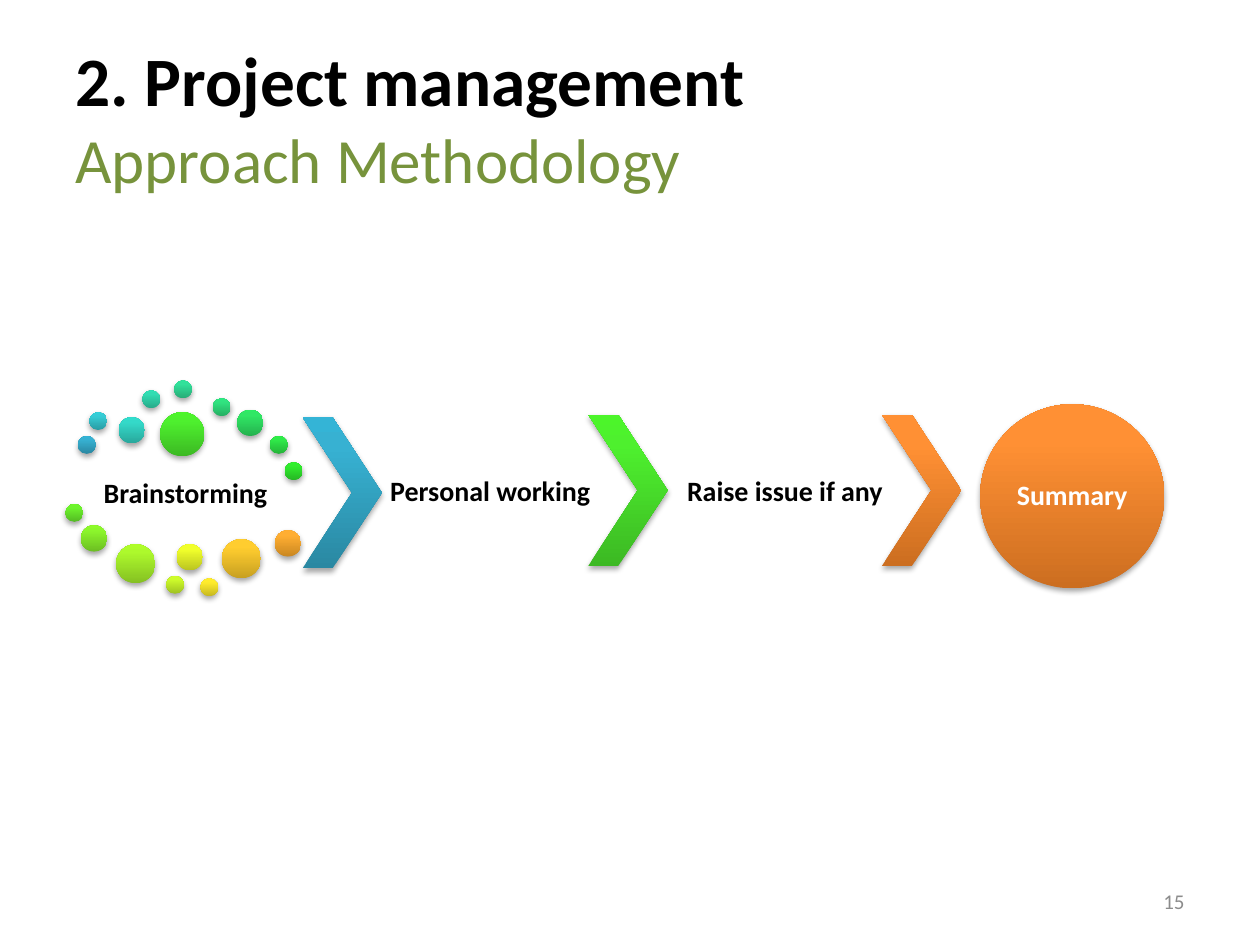
"""Build the project management slide with its brainstorming-to-summary process."""
from lxml import etree
from pptx import Presentation
from pptx.dml.color import RGBColor
from pptx.enum.shapes import MSO_SHAPE
from pptx.enum.text import MSO_ANCHOR, MSO_AUTO_SIZE, PP_ALIGN
from pptx.oxml import parse_xml
from pptx.util import Cm, Pt

DRAWING = "http://schemas.openxmlformats.org/drawingml/2006/main"
BLUE = ("2A88A2", "37B1D2", "34B4D6")
GREEN = ("3CB923", "4EF02E", "4CF52A")
ORANGE = ("CC6E20", "FF9034", "FF9136")
SMALL, MEDIUM, LARGE, CORE = 0.36, 0.53, 0.79, 0.89


def style_text(frame, size, color, bold=True, align=PP_ALIGN.CENTER, inset=0.05):
    frame.word_wrap = True
    frame.vertical_anchor = MSO_ANCHOR.MIDDLE
    frame.margin_left = frame.margin_right = Cm(inset)
    frame.margin_top = frame.margin_bottom = Cm(inset)
    paragraph = frame.paragraphs[0]
    paragraph.alignment = align
    for run in paragraph.runs:
        run.font.name = "Calibri"
        run.font.size = Pt(size)
        run.font.bold = bold
        run.font.color.rgb = RGBColor.from_string(color)


def add_glossy(kind, left, top, width, height, colors):
    shape = slide.shapes.add_shape(kind, Cm(left), Cm(top), Cm(width), Cm(height))
    shape.line.fill.background()
    shape.fill.gradient()
    shape.fill.gradient_angle = 90
    stops = shape._element.spPr.find(f".//{{{DRAWING}}}gsLst")
    for stop in list(stops):
        stops.remove(stop)
    for position, color in zip((0, 80000, 100000), colors):
        stop = etree.SubElement(stops, f"{{{DRAWING}}}gs", pos=str(position))
        etree.SubElement(stop, f"{{{DRAWING}}}srgbClr", val=color)
    shape._element.spPr.append(parse_xml(
        f'<a:effectLst xmlns:a="{DRAWING}">'
        '<a:outerShdw blurRad="40000" dist="23000" dir="5400000" rotWithShape="0">'
        '<a:srgbClr val="000000"><a:alpha val="35000"/></a:srgbClr>'
        '</a:outerShdw></a:effectLst>'))
    return shape


prs = Presentation()
prs.slide_width, prs.slide_height = Cm(25.4), Cm(19.05)
slide = prs.slides.add_slide(prs.slide_layouts[5])

title = slide.shapes.title
title.left, title.top, title.width, title.height = Cm(1.27), Cm(0.76), Cm(22.86), Cm(3.18)
title.text_frame.text = "2. Project management\vApproach Methodology"
title.text_frame.auto_size = MSO_AUTO_SIZE.NONE
style_text(title.text_frame, 39.6, "000000", align=PP_ALIGN.LEFT, inset=0.25)
subtitle = title.text_frame.paragraphs[0].runs[1]
subtitle.font.size = Pt(36)
subtitle.font.bold = False
subtitle.font.color.rgb = RGBColor.from_string("77933C")

page_number = slide.shapes.add_textbox(Cm(18.21), Cm(17.65), Cm(5.92), Cm(1.02))
page_number.text_frame.text = "15"
style_text(page_number.text_frame, 12, "8C8C8C", False, PP_ALIGN.RIGHT, 0.25)

idea_dots = [
    (1.57, 8.79, SMALL, BLUE),
    (1.80, 8.31, SMALL, ("299DA4", "36CCD5", "33D0D9")),
    (2.39, 8.41, MEDIUM, ("28A79B", "34D9C9", "31DDCD")),
    (2.87, 7.87, SMALL, ("27AA89", "33DCB2", "30E1B5")),
    (3.51, 7.67, SMALL, ("27AC77", "32E09A", "2FE49B")),
    (4.29, 8.03, SMALL, ("26AF63", "31E380", "2EE881")),
    (4.78, 8.26, MEDIUM, ("25B24E", "30E765", "2DEB64")),
    (5.44, 8.79, SMALL, ("24B438", "2FEA49", "2CEF47")),
    (5.74, 9.32, SMALL, ("26B724", "31ED2E", "2EF22B")),
    (3.23, 8.31, CORE, GREEN),
    (1.32, 10.16, SMALL, ("54BB23", "6DF32D", "6CF829")),
    (1.63, 10.59, MEDIUM, ("6CBE22", "8CF62C", "8DFB29")),
    (2.34, 10.97, LARGE, ("85C022", "ADF92C", "AFFE28")),
    (3.35, 11.61, SMALL, ("9FC221", "CEFC2B", "D0FF2A")),
    (3.56, 10.97, MEDIUM, ("BAC421", "F1FF2B", "F1FF2C")),
    (4.04, 11.66, SMALL, ("C6B821", "FFEC2D", "FFED2E")),
    (4.47, 10.87, LARGE, ("C8A021", "FFCD2F", "FFCD31")),
    (5.54, 10.69, MEDIUM, ("CA8721", "FFAE32", "FFAF33")),
]
for left, top, size, colors in idea_dots:
    add_glossy(MSO_SHAPE.OVAL, left, top, size, size, colors)

for left, top, colors in [(6.1, 8.41, BLUE), (11.86, 8.36, GREEN), (17.78, 8.36, ORANGE)]:
    chevron = add_glossy(MSO_SHAPE.CHEVRON, left, top, 1.6, 3.05, colors)
    chevron.adjustments[0] = 0.623

steps = [
    ("Brainstorming", 1.57, 9.25, 4.34, 1.42),
    ("Personal working", 7.7, 8.41, 4.37, 3.05),
    ("Raise issue if any", 13.64, 8.41, 4.37, 3.05),
]
for name, left, top, width, height in steps:
    step = slide.shapes.add_textbox(Cm(left), Cm(top), Cm(width), Cm(height))
    step.text_frame.text = name
    step.text_frame.paragraphs[0].line_spacing = 0.9
    style_text(step.text_frame, 16, "000000")

summary = add_glossy(MSO_SHAPE.OVAL, 19.76, 8.15, 3.71, 3.71, ORANGE)
summary.text_frame.text = "Summary"
summary.text_frame.paragraphs[0].line_spacing = 0.9
style_text(summary.text_frame, 16, "FFFFFF", inset=0)

prs.save("out.pptx")
